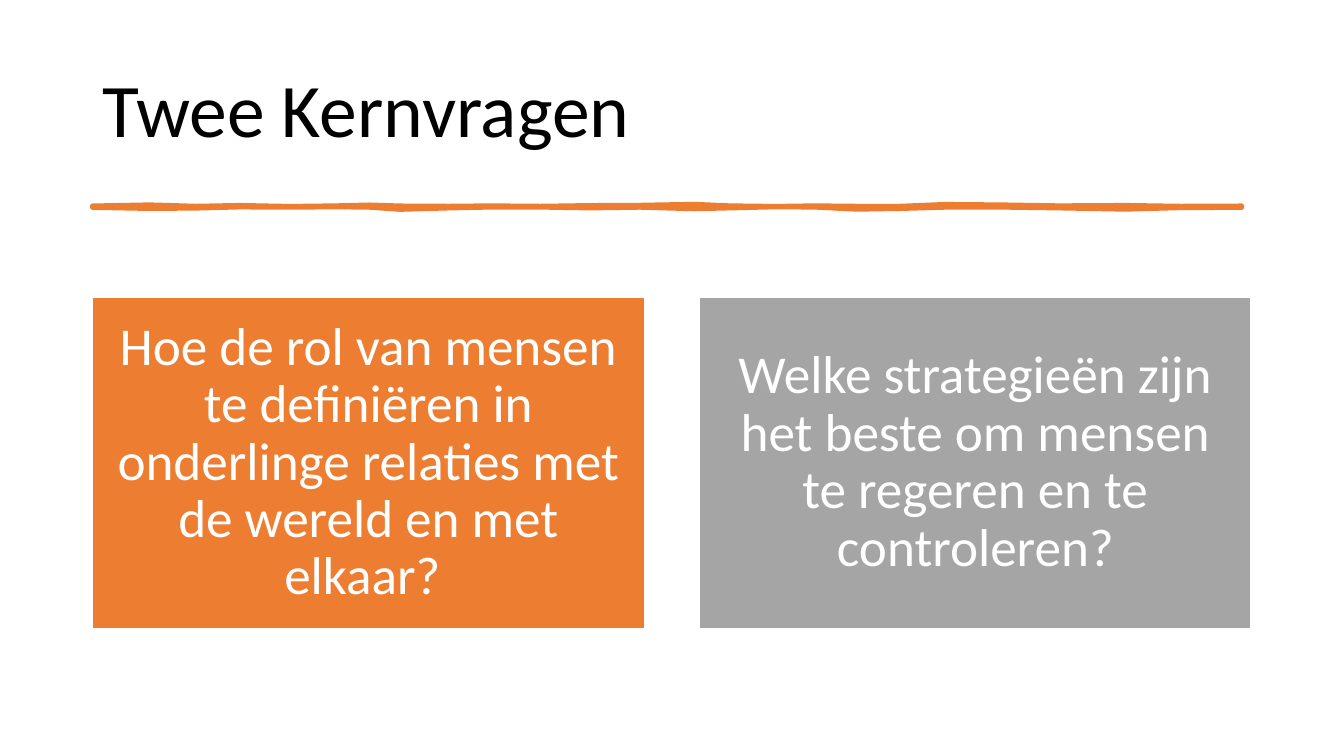
"""Build a slide with two key questions under a hand-drawn rule."""
from pptx import Presentation
from pptx.dml import color
from pptx.enum import shapes, text
from pptx.util import Pt


def rgb(value):
    return color.RGBColor.from_string(value)


def write(shape, content, size, ink, align, inset_x, inset_y):
    frame = shape.text_frame
    frame.word_wrap = True
    frame.auto_size = text.MSO_AUTO_SIZE.NONE
    frame.vertical_anchor = text.MSO_ANCHOR.MIDDLE
    frame.margin_left = frame.margin_right = Pt(inset_x)
    frame.margin_top = frame.margin_bottom = Pt(inset_y)
    paragraph = frame.paragraphs[0]
    paragraph.alignment = align
    paragraph.line_spacing = 0.9
    run = paragraph.add_run()
    run.text = content
    run.font.name = "Calibri"
    run.font.size = Pt(size)
    run.font.color.rgb = rgb(ink)


presentation = Presentation()
presentation.slide_width, presentation.slide_height = Pt(960), Pt(540)
slide = presentation.slides.add_slide(presentation.slide_layouts[5])

title = slide.shapes.title
title.left, title.top, title.width, title.height = Pt(66), Pt(28.8), Pt(828), Pt(104.4)
write(title, "Twee Kernvragen", 54, "000000", text.PP_ALIGN.LEFT, 7.2, 3.6)

# (x, y of upper edge, y of lower edge)
rule_edges = [
    (66, 147, 148.3), (107, 146.2, 149.1), (140, 147.2, 148.8), (171, 146.6, 148),
    (207, 147.3, 148.2), (240, 146.9, 147.9), (264, 146.3, 148.2), (286, 147, 149.7),
    (321, 147.2, 148.7), (350, 146.9, 148.1), (386, 147.2, 148.1), (421, 146.7, 148.7),
    (457, 146.5, 148.2), (496, 145.8, 149.3), (521, 146.9, 148.7), (554, 147.3, 147.9),
    (582, 146.9, 148.1), (612, 147.2, 149.6), (643, 147.2, 149.1), (675, 145.9, 148.2),
    (714, 146.2, 148.1), (757, 146.9, 148.7), (804, 146.6, 149.6), (843, 147.2, 148.5),
    (887, 147, 148.3),
]
upper = [(Pt(x), Pt(y)) for x, y, _ in rule_edges]
lower = [(Pt(x), Pt(y)) for x, _, y in reversed(rule_edges)]
builder = slide.shapes.build_freeform(*upper[0])
builder.add_line_segments(upper[1:] + lower, close=True)
rule = builder.convert_to_shape()
rule.shadow.inherit = False
rule.fill.solid()
rule.fill.fore_color.rgb = rgb("ED7D31")
rule.line.color.rgb = rgb("ED7D31")
rule.line.width = Pt(3.25)

questions = [
    ("Hoe de rol van mensen te definiëren in onderlinge relaties met de wereld en met elkaar? ", "ED7D31"),
    ("Welke strategieën zijn het beste om mensen te regeren en te controleren?", "A5A5A5"),
]
for index, (question, fill) in enumerate(questions):
    card = slide.shapes.add_shape(
        shapes.MSO_SHAPE.RECTANGLE, Pt(66.2 + index * 433.5), Pt(212.4), Pt(394), Pt(236.4))
    card.shadow.inherit = False
    card.fill.solid()
    card.fill.fore_color.rgb = rgb(fill)
    card.line.color.rgb = rgb("FFFFFF")
    card.line.width = Pt(1)
    write(card, question, 38, "FFFFFF", text.PP_ALIGN.CENTER, 11.5, 11.5)

presentation.save("out.pptx")
